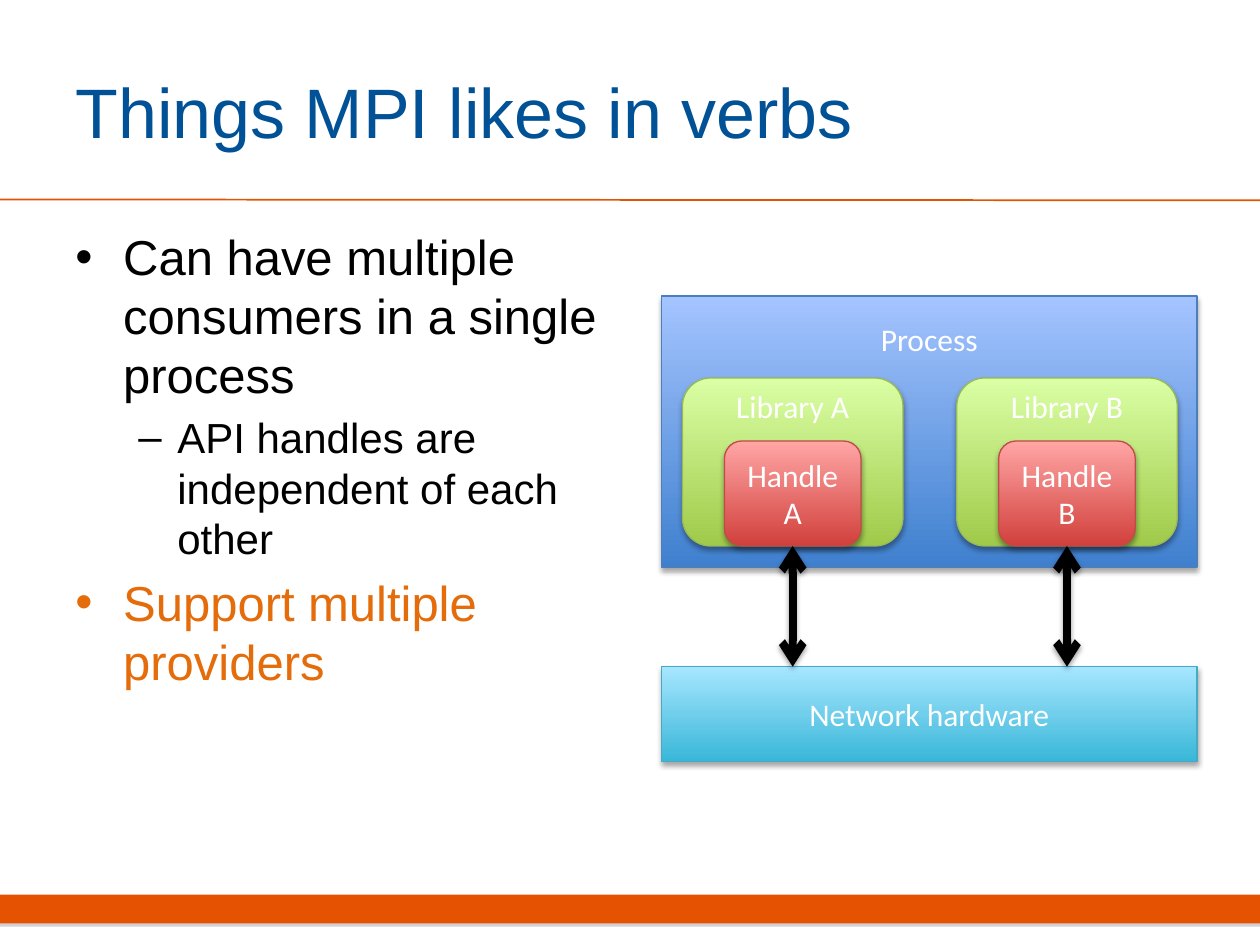
from dataclasses import dataclass
from lxml.etree import SubElement
from pptx import Presentation
from pptx.dml.color import RGBColor
from pptx.enum.shapes import MSO_CONNECTOR, MSO_SHAPE
from pptx.enum.text import MSO_ANCHOR, MSO_AUTO_SIZE, PP_ALIGN
from pptx.oxml.ns import qn
from pptx.util import Inches, Pt


@dataclass(frozen=True)
class Theme:
    head: str = "Arial"
    label: str = "Calibri"
    title: int = 40
    body: tuple = (28, 24)
    small: int = 18
    navy: str = "005195"
    rust: str = "E55302"
    amber: str = "E46C0A"
    black: str = "000000"
    white: str = "FFFFFF"
    grey: str = "808080"
    # bottom, top and outline colour
    blue: tuple = ("3F80CE", "A4C4FF", "4B7EBC")
    cyan: tuple = ("39B7D8", "A7E6FF", "46AAC5")
    green: tuple = ("A0CA4A", "DAFFA5", "98B955")
    red: tuple = ("D1403C", "FFA6A5", "BF4C48")


def grid(*cells):
    """Turn grid cells, twelve to the inch, into lengths."""
    return [Inches(cell / 12) for cell in cells]


def rgb(color):
    return RGBColor.from_string(color)


def shade(effects, color, alpha, blur, dist):
    """Add a shadow that falls straight down."""
    outer = SubElement(effects, qn("a:outerShdw"), blurRad=str(Pt(blur)),
                       dist=str(Pt(dist)), dir="5400000", rotWithShape="0")
    tint = SubElement(outer, qn("a:srgbClr"), val=color)
    SubElement(tint, qn("a:alpha"), val=str(alpha * 1000))


class Deck:
    levels = ((0.38, 0.38, "•"), (0.81, 0.31, "–"))

    def __init__(self, theme):
        self.theme = theme
        self.file = Presentation()
        self.file.slide_width, self.file.slide_height = grid(120, 90)
        self.slide = self.file.slides.add_slide(self.file.slide_layouts[5])
        self.shapes = self.slide.shapes

    def style(self, para, size, color, name):
        font = para.font
        font.size, font.name = Pt(size), name
        font.color.rgb = rgb(color)

    def title(self, text, *box):
        shape = self.shapes.title
        shape.left, shape.top, shape.width, shape.height = grid(*box)
        frame = shape.text_frame
        frame.text = text
        frame.auto_size = MSO_AUTO_SIZE.NONE
        frame.vertical_anchor = MSO_ANCHOR.MIDDLE
        para = frame.paragraphs[0]
        para.alignment = PP_ALIGN.LEFT
        self.style(para, self.theme.title, self.theme.navy, self.theme.head)

    def bullets(self, items, *box):
        frame = self.shapes.add_textbox(*grid(*box)).text_frame
        frame.word_wrap = True
        for i, (level, text, color) in enumerate(items):
            para = frame.add_paragraph() if i else frame.paragraphs[0]
            para.text, para.level = text, level
            left, hang, mark = self.levels[level]
            size = self.theme.body[level]
            para.space_before = Pt(size * 0.2 if i else 0)
            props = para._p.get_or_add_pPr()
            props.set("marL", str(Inches(left)))
            props.set("indent", str(-Inches(hang)))
            SubElement(props, qn("a:buFont"), typeface=self.theme.head)
            SubElement(props, qn("a:buChar"), char=mark)
            self.style(para, size, color, self.theme.head)

    def bar(self, *box):
        shape = self.shapes.add_shape(MSO_SHAPE.RECTANGLE, *grid(*box))
        shape.fill.solid()
        shape.fill.fore_color.rgb = rgb(self.theme.rust)
        shape.line.fill.background()
        shape.shadow.inherit = False
        shade(shape._element.spPr.find(qn("a:effectLst")),
              self.theme.grey, 35, 0, 1.8)

    def block(self, text, colors, *box, kind=MSO_SHAPE.RECTANGLE, inset=None):
        """Draw a labelled box; an inset puts the label that far from the top."""
        shape = self.shapes.add_shape(kind, *grid(*box))
        *stops, edge = colors
        shape.fill.gradient()
        shape.fill.gradient_angle = 90
        for stop, color in zip(shape.fill.gradient_stops, stops):
            stop.color.rgb = rgb(color)
        shape.line.color.rgb, shape.line.width = rgb(edge), Pt(0.75)
        shape.shadow.inherit = False
        shade(shape._element.spPr.find(qn("a:effectLst")),
              self.theme.black, 35, 3.1, 1.8)
        frame = shape.text_frame
        frame.text, frame.word_wrap = text, True
        frame.vertical_anchor = MSO_ANCHOR.MIDDLE
        if inset is not None:
            frame.vertical_anchor = MSO_ANCHOR.TOP
            frame.margin_top = Inches(inset)
        para = frame.paragraphs[0]
        para.alignment = PP_ALIGN.CENTER
        self.style(para, self.theme.small, self.theme.white, self.theme.label)
        return shape

    def line(self, color, width, *ends):
        link = self.shapes.add_connector(MSO_CONNECTOR.STRAIGHT, *grid(*ends))
        link.line.color.rgb, link.line.width = rgb(color), Pt(width)
        return link, SubElement(link._element.spPr, qn("a:effectLst"))

    def arrow(self, start, *ends):
        """Join the foot of a shape to a point, with a head at each end."""
        link, effects = self.line(self.theme.black, 4.5, *ends)
        link.begin_connect(start, 2)
        for end in ("a:headEnd", "a:tailEnd"):
            SubElement(link.line._get_or_add_ln(), qn(end), type="arrow")
        shade(effects, self.theme.black, 38, 3.1, 1.6)


def main():
    theme = Theme()
    deck = Deck(theme)
    deck.bar(0, 85.2, 120, 2.76)
    deck.line(theme.rust, 1, 0, 19, 120, 19.08)
    deck.title("Things MPI likes in verbs", 6, 3, 98, 15)
    deck.bullets((
        (0, "Can have multiple consumers in a single process", theme.black),
        (1, "API handles are independent of each other", theme.black),
        (0, "Support multiple providers", theme.amber),
    ), 6, 21, 53, 59.4)

    deck.block("Process", theme.blue, 63, 28.2, 51, 25.8, inset=0.19)
    deck.block("Network hardware", theme.cyan, 63, 63.5, 51, 9)
    for i, name in enumerate("AB"):
        shift = 26.12 * i
        deck.block(f"Library {name}", theme.green, 65 + shift, 36, 21, 16,
                   kind=MSO_SHAPE.ROUNDED_RECTANGLE, inset=0.01)
        handle = deck.block(f"Handle {name}", theme.red, 69 + shift, 42, 13, 10,
                            kind=MSO_SHAPE.ROUNDED_RECTANGLE)
        mid = 75.5 + shift
        deck.arrow(handle, mid, 52, mid, 63.5)
    deck.file.save("out.pptx")


if __name__ == "__main__":
    main()
